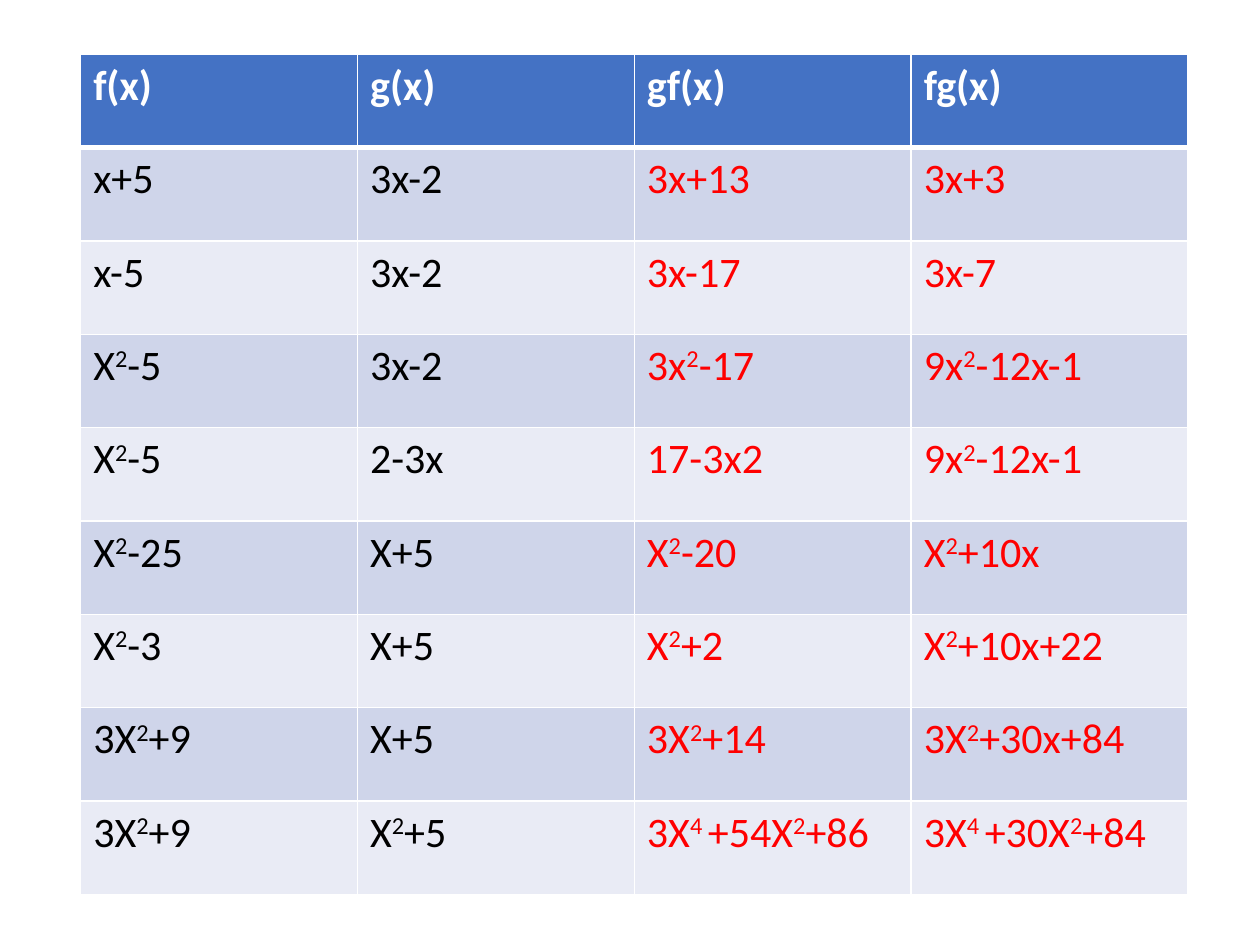
from dataclasses import dataclass

from lxml.etree import SubElement
from pptx import Presentation
from pptx.dml.color import RGBColor as Color
from pptx.oxml.ns import qn
from pptx.util import Inches, Pt


@dataclass(frozen=True)
class Theme:
    font: str = "Calibri"
    size: int = 24
    header: str = "4472C4"
    bands: tuple = ("E9EBF5", "CFD5EA")
    white: str = "FFFFFF"
    question: str = "000000"
    answer: str = "FF0000"
    thin: int = 1
    thick: int = 3


theme = Theme()

# Text between a pair of ^ marks is superscript.
ROWS = [
    ["f(x)", "g(x)", "gf(x)", "fg(x)"],
    ["x+5", "3x-2", "3x+13", "3x+3"],
    ["x-5", "3x-2", "3x-17", "3x-7"],
    ["X^2^-5", "3x-2", "3x^2^-17", "9x^2^-12x-1"],
    ["X^2^-5", "2-3x", "17-3x2", "9x^2^-12x-1"],
    ["X^2^-25", "X+5", "X^2^-20", "X^2^+10x"],
    ["X^2^-3", "X+5", "X^2^+2", "X^2^+10x+22"],
    ["3X^2^+9", "X+5", "3X^2^+14", "3X^2^+30x+84"],
    ["3X^2^+9", "X^2^+5", "3X^4 ^+54X^2^+86", "3X^4 ^+30X^2^+84"],
]
ANSWER_COLUMN = 2


def set_borders(cell, top, bottom):
    """Draw white cell borders; top and bottom are widths in points."""
    properties = cell._tc.get_or_add_tcPr()
    widths = {"a:lnL": theme.thin, "a:lnR": theme.thin, "a:lnT": top, "a:lnB": bottom}
    for tag, width in widths.items():
        line = SubElement(properties, qn(tag), w=str(Pt(width)))
        fill = SubElement(line, qn("a:solidFill"))
        SubElement(fill, qn("a:srgbClr"), val=theme.white)


def add_formula(para, formula, color, bold):
    for index, part in enumerate(formula.split("^")):
        span = para.add_run()
        span.text = part
        span.font.name = theme.font
        span.font.size = Pt(theme.size)
        span.font.bold = bold
        span.font.color.rgb = Color.from_string(color)
        if index % 2:
            span.font._element.set("baseline", "30000")


deck = Presentation()
deck.slide_width, deck.slide_height = Inches(10), Inches(7.5)
page = deck.slides.add_slide(deck.slide_layouts[6])

table = page.shapes.add_table(
    len(ROWS), len(ROWS[0]), Inches(0.64), Inches(0.43), Inches(8.79), Inches(6.67)
).table

for row, formulas in enumerate(ROWS):
    is_header = row == 0
    fill = theme.header if is_header else theme.bands[row % 2]
    top = theme.thick if row == 1 else theme.thin
    bottom = theme.thick if is_header else theme.thin
    for column, formula in enumerate(formulas):
        cell = table.cell(row, column)
        set_borders(cell, top, bottom)
        cell.fill.solid()
        cell.fill.fore_color.rgb = Color.from_string(fill)
        if is_header:
            color = theme.white
        else:
            color = theme.answer if column >= ANSWER_COLUMN else theme.question
        add_formula(cell.text_frame.paragraphs[0], formula, color, is_header)

deck.save("out.pptx")
